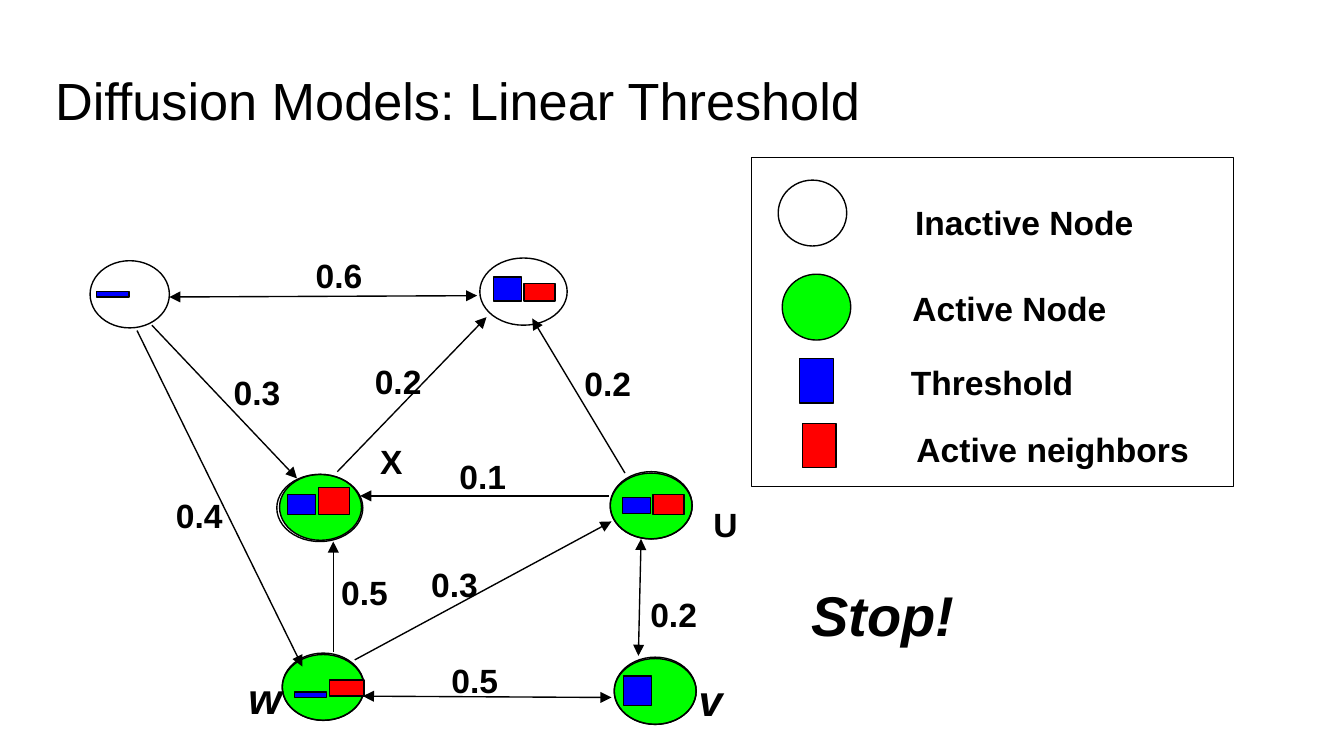
"""Build a slide on the linear threshold model of diffusion."""
from typing import NamedTuple

from pptx import Presentation
from pptx.dml.color import RGBColor
from pptx.enum.shapes import MSO_CONNECTOR, MSO_SHAPE
from pptx.enum.text import MSO_ANCHOR, PP_ALIGN
from pptx.oxml.ns import qn
from pptx.util import Inches, Pt
from lxml import etree

OVAL = MSO_SHAPE.OVAL
RECT = MSO_SHAPE.RECTANGLE
LINE = MSO_CONNECTOR.STRAIGHT
TOP = MSO_ANCHOR.TOP
LEFT = PP_ALIGN.LEFT
BLACK, WHITE, GREEN, BLUE, RED = "000000", "FFFFFF", "00FF00", "0000FF", "FF0000"
FONT = "Arial"


class Form(NamedTuple):
    kind: int
    x: float
    y: float
    w: float
    h: float
    fill: str = ""


class Edge(NamedTuple):
    x1: float
    y1: float
    x2: float
    y2: float
    ends: str = "tail"


class Label(NamedTuple):
    text: str
    x: float
    y: float
    w: float = 0.59
    h: float = 0.36
    size: int = 18
    slant: bool = False


FORMS = [
    Form(OVAL, 2.08, 3.53, 0.61, 0.49, GREEN),
    Form(OVAL, 4.54, 3.52, 0.61, 0.49, GREEN),
    Form(OVAL, 2.1, 4.87, 0.61, 0.49, GREEN),
    Form(OVAL, 4.57, 4.9, 0.61, 0.49, GREEN),
    Form(OVAL, 2.06, 3.53, 0.64, 0.5),
    Form(OVAL, 4.54, 3.51, 0.61, 0.5),
    Form(OVAL, 2.1, 4.86, 0.61, 0.5),
    Form(OVAL, 4.57, 4.89, 0.61, 0.5),
    Form(OVAL, 0.67, 1.94, 0.59, 0.5, WHITE),
    Form(OVAL, 3.57, 1.92, 0.65, 0.5, WHITE),
    Form(RECT, 5.59, 1.17, 3.59, 2.45),
    Form(OVAL, 5.79, 1.34, 0.51, 0.49, WHITE),
    Form(OVAL, 5.82, 2.04, 0.51, 0.49, GREEN),
    Form(RECT, 5.95, 2.67, 0.25, 0.33, BLUE),
    Form(RECT, 5.97, 3.15, 0.25, 0.33, RED),
]

EDGES = [
    Edge(2.7, 5.18, 4.55, 5.19, "head tail"),
    Edge(2.64, 4.91, 4.55, 3.88),
    Edge(2.48, 4.85, 2.48, 4.03),
    Edge(4.53, 3.69, 2.68, 3.69),
    Edge(1.02, 2.46, 2.25, 4.96),
    Edge(1.13, 2.42, 2.21, 3.56),
    Edge(2.51, 3.51, 3.62, 2.36),
    Edge(1.26, 2.21, 3.55, 2.2, "head tail"),
    Edge(3.96, 2.37, 4.65, 3.52, "head"),
    Edge(4.77, 4.01, 4.75, 4.88, "head tail"),
]

BARS = [
    Form(RECT, 4.64, 5.03, 0.21, 0.22, BLUE),
    Form(RECT, 3.67, 2.06, 0.21, 0.18, BLUE),
    Form(RECT, 2.14, 3.68, 0.21, 0.15, BLUE),
    Form(RECT, 4.63, 3.7, 0.21, 0.12, BLUE),
    Form(RECT, 2.19, 5.15, 0.24, 0.04, BLUE),
    Form(RECT, 0.72, 2.17, 0.24, 0.04, BLUE),
    Form(RECT, 2.45, 5.06, 0.26, 0.12, RED),
    Form(RECT, 4.86, 3.68, 0.23, 0.15, RED),
    Form(RECT, 2.37, 3.63, 0.23, 0.2, RED),
    Form(RECT, 3.9, 2.11, 0.23, 0.13, RED),
]

LABELS = [
    Label("Inactive Node", 6.71, 1.45, 2.15, 0.35),
    Label("Active Node", 6.69, 2.09, 2.15, 0.35),
    Label("Threshold", 6.68, 2.64, 1.74, 0.35),
    Label("Active neighbors", 6.72, 3.14, 2.29, 0.35),
    Label("v", 5.1, 4.96, 0.3, 0.44, 23, True),
    Label("w", 1.75, 4.95, 0.33, 0.44, 23, True),
    Label("0.5", 3.26, 4.86),
    Label("0.3", 3.11, 4.15),
    Label("0.2", 4.74, 4.37),
    Label("0.5", 2.44, 4.21),
    Label("0.1", 3.32, 3.34),
    Label("0.4", 1.21, 3.63),
    Label("0.3", 1.64, 2.72),
    Label("0.2", 2.69, 2.64),
    Label("0.6", 2.25, 1.85),
    Label("0.2", 4.25, 2.65),
    Label("Stop!", 5.94, 4.27, 1.42, 0.54, 30, True),
    Label("U", 5.21, 3.7, 0.38),
    Label("X", 2.73, 3.23, 0.38),
]


def paint(target, tint: str) -> None:
    """Give a colour format its hex colour."""
    target.rgb = RGBColor.from_string(tint)


def style(para, size: int, bold: bool = False, slant: bool = False) -> None:
    """Set the font of a paragraph."""
    font = para.font
    font.name, font.size, font.bold, font.italic = FONT, Pt(size), bold, slant
    paint(font.color, BLACK)


def draw_form(slide, form: Form) -> None:
    """Draw an outlined shape, filled if it has a fill."""
    shape = slide.shapes.add_shape(
        form.kind, Inches(form.x), Inches(form.y), Inches(form.w), Inches(form.h))
    shape.shadow.inherit = False
    if form.fill:
        shape.fill.solid()
        paint(shape.fill.fore_color, form.fill)
    else:
        shape.fill.background()
    paint(shape.line.color, BLACK)
    shape.line.width = Pt(0.75)


def draw_edge(slide, edge: Edge) -> None:
    """Draw a line with arrowheads at the named ends."""
    link = slide.shapes.add_connector(
        LINE, Inches(edge.x1), Inches(edge.y1), Inches(edge.x2), Inches(edge.y2))
    paint(link.line.color, BLACK)
    link.line.width = Pt(0.75)
    props = link.element.spPr
    for end in edge.ends.split():
        etree.SubElement(props.find(qn("a:ln")), qn(f"a:{end}End"), type="triangle")
    etree.SubElement(props, qn("a:effectLst"))


def draw_label(slide, label: Label) -> None:
    """Write a bold label."""
    box = slide.shapes.add_textbox(
        Inches(label.x), Inches(label.y), Inches(label.w), Inches(label.h))
    frame = box.text_frame
    frame.word_wrap = True
    frame.text = label.text
    style(frame.paragraphs[0], label.size, True, label.slant)


def draw_title(slide, text: str) -> None:
    """Place and fill the title."""
    title = slide.shapes.title
    title.left, title.top = Inches(0.31), Inches(0.41)
    title.width, title.height = Inches(9.32), Inches(0.63)
    frame = title.text_frame
    frame.text = text
    frame.vertical_anchor = TOP
    frame.margin_left = frame.margin_right = Inches(0.1)
    frame.margin_top = frame.margin_bottom = Inches(0.1)
    frame.paragraphs[0].alignment = LEFT
    style(frame.paragraphs[0], 28)


def main() -> None:
    """Build and save the slide."""
    deck = Presentation()
    deck.slide_width = Inches(10)
    deck.slide_height = deck.slide_width * 9 // 16
    slide = deck.slides.add_slide(deck.slide_layouts[5])
    draw_title(slide, "Diffusion Models: Linear Threshold")
    for draw, items in ((draw_form, FORMS), (draw_edge, EDGES),
                        (draw_form, BARS), (draw_label, LABELS)):
        for item in items:
            draw(slide, item)
    deck.save("out.pptx")


if __name__ == "__main__":
    main()
